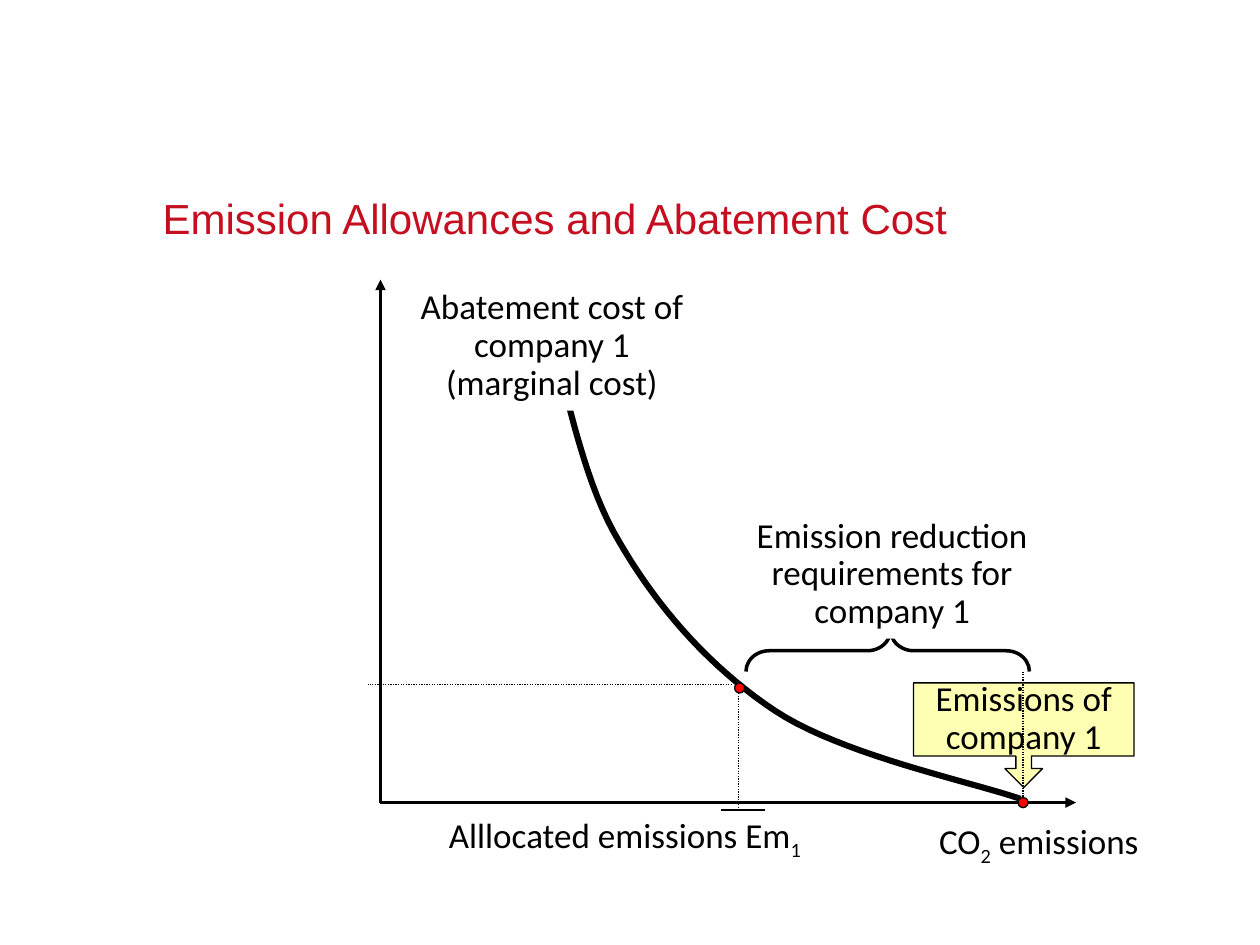
from dataclasses import dataclass
from lxml.etree import SubElement
from pptx import Presentation
from pptx.dml.color import RGBColor
from pptx.enum.dml import MSO_LINE
from pptx.enum.shapes import MSO_CONNECTOR, MSO_SHAPE as SHAPE
from pptx.enum.text import MSO_ANCHOR as ANCHOR, PP_ALIGN as ALIGN
from pptx.oxml.ns import qn
from pptx.util import Pt

PX = 9144


@dataclass(frozen=True)
class Theme:
    black: str = "000000"
    white: str = "FFFFFF"
    title: str = "C50E1F"
    dot: str = "FF0000"
    callout: str = "FFFFB3"
    title_font: str = "Arial"
    body_font: str = "Calibri"
    title_size: int = 24
    body_size: int = 20
    hairline: float = 0.75
    tick: float = 1.5
    axis: float = 2
    curve: float = 3.5


T = Theme()

TITLE = ("Emission Allowances and Abatement Cost", (129, 101, 741, 92))
COST_LABEL = ("Abatement cost of company 1 (marginal cost)", (317, 225, 242, 101))
REDUCTION_LABEL = ("Emission reduction requirements for company 1", (562, 406, 292, 101))
AXIS_LABEL = ("CO_2_ emissions", (683, 642, 283, 45))
ALLOCATED_LABEL = ("Alllocated emissions Em_1_", (342, 637, 308, 45))
CALLOUT = ("Emissions of\vcompany 1", (725, 542, 175, 83), (0.15, 0.18, 0.18, 0.7))
BRACE = ((688, 404, 33, 225), (0.56, 0.49))

AXES = [((302, 637), (854, 637)), ((302, 637), (302, 222))]
ALLOCATED_GUIDES = [((586, 542), (586, 642)), ((581, 543), (292, 543))]
EMISSIONS_GUIDE = ((812, 533), (812, 633))
TICK = ((572, 643), (607, 643))
DOT_SIZE = 8
EMISSIONS_DOT = (808, 633)
ALLOCATED_DOT = (583, 542)
CURVE_START = (430, 229)
CURVE_SEGMENTS = [
    ((439, 261), (456, 366), (487, 422)),
    ((518, 478), (561, 528), (615, 564)),
    ((668, 599), (769, 620), (810, 634)),
]
CURVE_STEPS = 20

prs = Presentation()
prs.slide_width, prs.slide_height = 1000 * PX, 750 * PX
shapes = prs.slides.add_slide(prs.slide_layouts[6]).shapes


def rgb(color):
    return RGBColor.from_string(color)


def emu(values):
    return [v * PX for v in values]


def paint(sp, fill=None, width=None):
    sp.shadow.inherit = False
    if fill:
        sp.fill.solid()
        sp.fill.fore_color.rgb = rgb(fill)
    else:
        sp.fill.background()
    if width:
        sp.line.color.rgb = rgb(T.black)
        sp.line.width = Pt(width)
    else:
        sp.line.fill.background()


def add_preset(kind, box, fill=None, width=None, adjust=()):
    sp = shapes.add_shape(kind, *emu(box))
    paint(sp, fill, width)
    for i, value in enumerate(adjust):
        sp.adjustments[i] = value
    return sp


def write(sp, text, spacing, font=T.body_font, size=T.body_size, color=T.black,
          align=ALIGN.CENTER, anchor=ANCHOR.TOP, wrap=True):
    tf = sp.text_frame
    tf.word_wrap = wrap
    tf.vertical_anchor = anchor
    p = tf.paragraphs[0]
    p.alignment = align
    p.line_spacing = spacing
    parts = text.split("_")
    p.text = parts[0]
    for part in filter(None, parts[1:]):
        p.add_run().text = part
    for i, r in enumerate(p.runs):
        r.font.name = font
        r.font.size = Pt(size)
        r.font.color.rgb = rgb(color)
        if len(parts) > 1 and i % 2:
            r.font._element.set("baseline", "-25000")
    return tf


def add_label(label, spacing, fill=None):
    text, box = label
    write(add_preset(SHAPE.RECTANGLE, box, fill), text, spacing)


def add_line(ends, width, arrow=False, dotted=False):
    start, end = ends
    cn = shapes.add_connector(MSO_CONNECTOR.STRAIGHT, *emu(start + end))
    cn.line.color.rgb = rgb(T.black)
    cn.line.width = Pt(width)
    if dotted:
        cn.line.dash_style = MSO_LINE.ROUND_DOT
    if arrow:
        SubElement(cn.line._get_or_add_ln(), qn("a:tailEnd"), type="triangle")
    SubElement(cn._element.spPr, qn("a:effectLst"))


def add_dot(corner):
    add_preset(SHAPE.OVAL, corner + (DOT_SIZE, DOT_SIZE), T.dot, T.hairline)


def bezier(a, b, c, d, t):
    u = 1 - t
    return [(u**3 * i + 3 * u * u * t * j + 3 * u * t * t * k + t**3 * m) * PX
            for i, j, k, m in zip(a, b, c, d)]


def add_curve():
    fb = shapes.build_freeform(*emu(CURVE_START))
    start = CURVE_START
    for b, c, d in CURVE_SEGMENTS:
        fb.add_line_segments([bezier(start, b, c, d, n / CURVE_STEPS)
                              for n in range(1, CURVE_STEPS + 1)], close=False)
        start = d
    paint(fb.convert_to_shape(), width=T.curve)


title, title_box = TITLE
tf = write(shapes.add_textbox(*emu(title_box)), title, Pt(30), T.title_font,
           T.title_size, T.title, ALIGN.LEFT, ANCHOR.BOTTOM)
tf.margin_left = tf.margin_right = tf.margin_top = tf.margin_bottom = 0

add_line(AXES[0], T.axis, arrow=True)
add_curve()
add_line(AXES[1], T.axis, arrow=True)
add_label(COST_LABEL, 0.9, T.white)
add_label(AXIS_LABEL, 1.1)
add_dot(EMISSIONS_DOT)

text, box, adjust = CALLOUT
callout = add_preset(SHAPE.DOWN_ARROW_CALLOUT, box, T.callout, T.hairline, adjust)
write(callout, text, 0.9, anchor=ANCHOR.MIDDLE, wrap=False)

for guide in ALLOCATED_GUIDES:
    add_line(guide, T.hairline, dotted=True)
add_label(ALLOCATED_LABEL, 1.1)
add_dot(ALLOCATED_DOT)

box, adjust = BRACE
add_preset(SHAPE.LEFT_BRACE, box, width=T.axis, adjust=adjust).rotation = 90
add_line(EMISSIONS_GUIDE, T.hairline, dotted=True)
add_label(REDUCTION_LABEL, 0.9, T.white)
add_line(TICK, T.tick)

prs.save("out.pptx")
